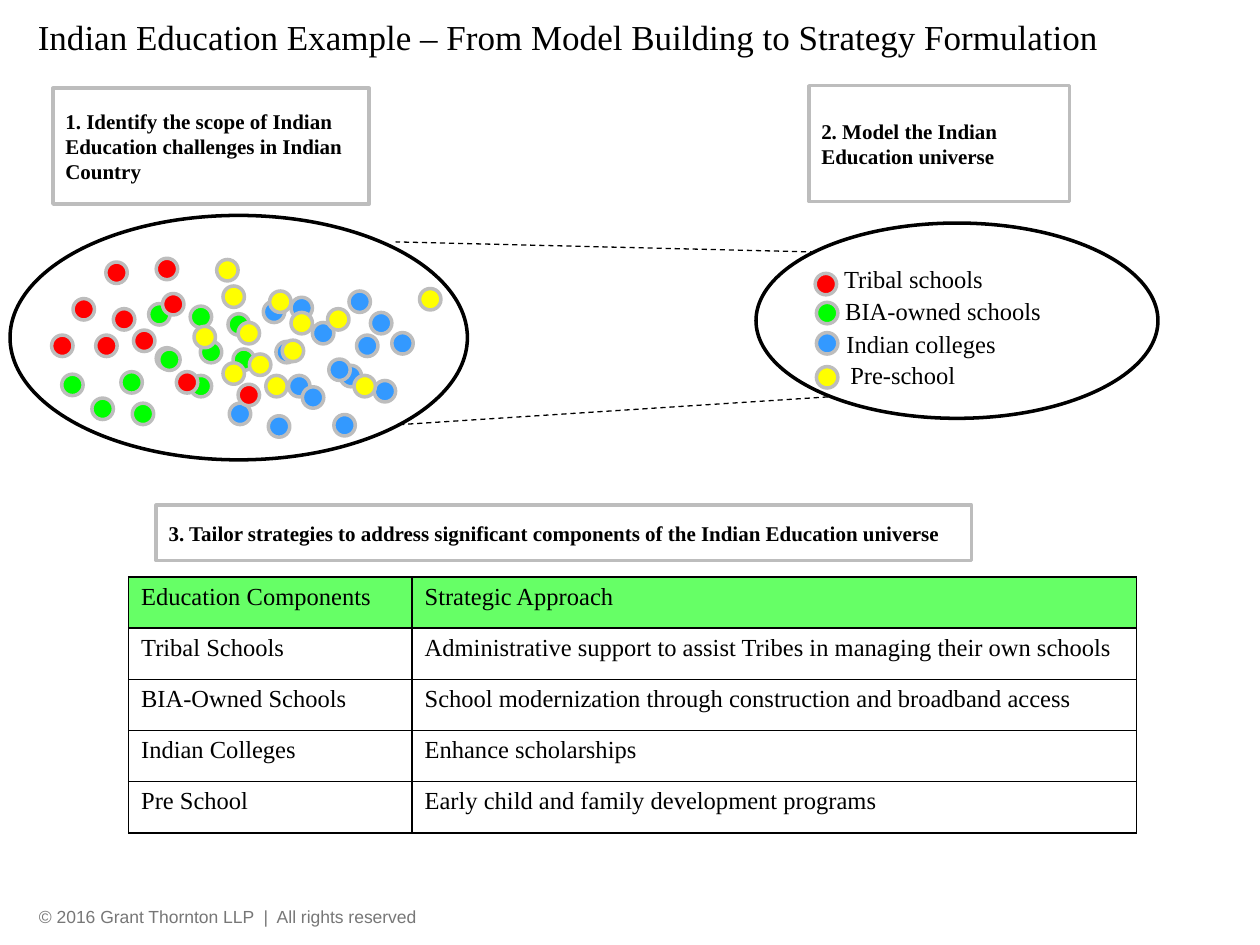
from dataclasses import dataclass

from lxml.etree import SubElement
from pptx import Presentation
from pptx.dml.color import RGBColor as RGB
from pptx.enum.dml import MSO_LINE
from pptx.enum.shapes import MSO_CONNECTOR as CONN, MSO_SHAPE as SHAPE
from pptx.enum.text import MSO_ANCHOR as ANCHOR, MSO_AUTO_SIZE as AUTO, PP_ALIGN as ALIGN
from pptx.oxml import parse_xml
from pptx.oxml.ns import nsdecls, qn
from pptx.util import Emu, Pt


@dataclass(frozen=True)
class Theme:
    black: str = "000000"
    white: str = "FFFFFF"
    gray: str = "BDBDBD"
    footer: str = "777777"
    header: str = "66FF66"
    tribal: str = "FF0000"
    bia: str = "00FF00"
    college: str = "3399FF"
    preschool: str = "FFFF00"
    serif: str = "Times New Roman"
    sans: str = "Arial"
    title_pt: int = 20
    body_pt: int = 14
    step_pt: int = 12
    footer_pt: int = 10


T = Theme()
PX = 9144  # 100 px to the inch
DOT = 17


def add_text(tf, text, size, font=T.serif, color=T.black, bold=False):
    p = tf.paragraphs[0]
    p.alignment = ALIGN.LEFT
    r = p.add_run()
    r.text = text
    r.font.size = Pt(size)
    r.font.name = font
    r.font.bold = bold
    r.font.color.rgb = RGB.from_string(color)


def add_outlined(kind, box, fill, line):
    sp = s.shapes.add_shape(kind, *[Emu(v * PX) for v in box])
    sp.shadow.inherit = False
    sp.fill.solid()
    sp.fill.fore_color.rgb = RGB.from_string(fill)
    sp.line.color.rgb = RGB.from_string(line)
    sp.line.width = Pt(2)
    return sp


prs = Presentation()
prs.slide_width, prs.slide_height = Emu(1000 * PX), Emu(750 * PX)
s = prs.slides.add_slide(prs.slide_layouts[5])

# Title
title = s.shapes.title
title.left, title.top, title.width, title.height = [Emu(v * PX) for v in (30, 12, 920, 69)]
tf = title.text_frame
tf.margin_left = tf.margin_top = tf.margin_right = tf.margin_bottom = 0
tf.vertical_anchor = ANCHOR.TOP
tf.auto_size = AUTO.NONE
add_text(tf, "Indian Education Example – From Model Building to Strategy Formulation", T.title_pt)

# The two universes
for box in [(8, 171, 363, 194), (600, 177, 319, 155)]:
    add_outlined(SHAPE.OVAL, box, T.white, T.black)

# Scattered components, from back to front
dot_layers = [
    (T.bia, [(181, 249)]),
    (T.college, [(277, 231)]),
    (T.tribal, [(90, 245), (76, 266), (41, 266), (58, 237)]),
    (T.bia, [(124, 276), (159, 271), (126, 277), (105, 320), (151, 243), (49, 297),
             (96, 295), (118, 241), (73, 316), (185, 277), (151, 298)]),
    (T.college, [(270, 290), (182, 320), (229, 298), (248, 256), (283, 266),
                 (231, 236), (219, 271), (209, 239), (213, 330)]),
    (T.preschool, [(211, 298), (224, 270), (214, 231), (177, 288), (189, 256),
                   (154, 259), (177, 227)]),
    (T.tribal, [(189, 305)]),
    (T.preschool, [(198, 281)]),
    (T.tribal, [(106, 262), (129, 233), (140, 295), (124, 205), (84, 208)]),
    (T.college, [(294, 248), (311, 264), (297, 302), (261, 285), (240, 307), (265, 329)]),
    (T.preschool, [(231, 248), (260, 245), (172, 206), (281, 298), (333, 229)]),
]
for color, spots in dot_layers:
    for x, y in spots:
        add_outlined(SHAPE.OVAL, (x, y, DOT, DOT), color, T.gray)

# Legend of the model, with the footer as one more free label
legend_dots = [(T.tribal, 647, 217), (T.bia, 648, 240),
               (T.college, 648, 264), (T.preschool, 648, 291)]
for color, x, y in legend_dots:
    add_outlined(SHAPE.OVAL, (x, y, DOT, DOT), color, T.gray)

legend_labels = [
    ("Tribal schools", 660, 205, 131),
    ("BIA-owned schools", 661, 230, 177),
    ("Indian colleges", 662, 256, 140),
    ("Pre-school", 665, 281, 104),
]
for text, x, y, w in legend_labels:
    tf = s.shapes.add_textbox(*[Emu(v * PX) for v in (x, y, w, 34)]).text_frame
    tf.word_wrap = False
    tf.auto_size = AUTO.SHAPE_TO_FIT_TEXT
    add_text(tf, text, T.body_pt)

# Numbered steps
steps = [
    ("1. Identify the scope of Indian Education challenges in Indian Country", (42, 70, 251, 92)),
    ("2. Model the Indian Education universe", (642, 68, 207, 92)),
    ("3. Tailor strategies to address significant components of the Indian Education universe",
     (124, 401, 647, 44)),
]
for text, box in steps:
    tf = add_outlined(SHAPE.RECTANGLE, box, T.white, T.gray).text_frame
    tf.word_wrap = True
    tf.vertical_anchor = ANCHOR.MIDDLE
    add_text(tf, text, T.step_pt, bold=True)

# Dashed projection lines
for ends in [(647, 200, 314, 192), (657, 315, 318, 337)]:
    line = s.shapes.add_connector(CONN.STRAIGHT, *[Emu(v * PX) for v in ends])
    line.line.color.rgb = RGB.from_string(T.black)
    line.line.width = Pt(0.75)
    line.line.dash_style = MSO_LINE.DASH
    SubElement(line._element.spPr, qn("a:effectLst"))

# Strategy table
rows = [
    ("Education Components", "Strategic Approach"),
    ("Tribal Schools", "Administrative support to assist Tribes in managing their own schools"),
    ("BIA-Owned Schools", "School modernization through construction and broadband access"),
    ("Indian Colleges", "Enhance scholarships"),
    ("Pre School", "Early child and family development programs"),
]
table = s.shapes.add_table(len(rows), 2, *[Emu(v * PX) for v in (102, 458, 800, 203)]).table
for col, w in zip(table.columns, (225, 575)):
    col.width = Emu(w * PX)
for i, row in enumerate(rows):
    for j, text in enumerate(row):
        cell = table.cell(i, j)
        add_text(cell.text_frame, text, T.body_pt)
        for side in ("lnL", "lnR", "lnT", "lnB"):
            cell._tc.get_or_add_tcPr().append(parse_xml(
                f'<a:{side} {nsdecls("a")} w="{Pt(1)}"><a:solidFill>'
                f'<a:srgbClr val="{T.black}"/></a:solidFill></a:{side}>'))
        cell.fill.solid()
        cell.fill.fore_color.rgb = RGB.from_string(T.white if i else T.header)

# Footer
tf = s.shapes.add_textbox(*[Emu(v * PX) for v in (31, 719, 303, 17)]).text_frame
tf.margin_left = tf.margin_top = tf.margin_right = tf.margin_bottom = 0
tf.word_wrap = False
tf.auto_size = AUTO.SHAPE_TO_FIT_TEXT
add_text(tf, "© 2016 Grant Thornton LLP  |  All rights reserved", T.footer_pt, T.sans, T.footer)

prs.save("out.pptx")
